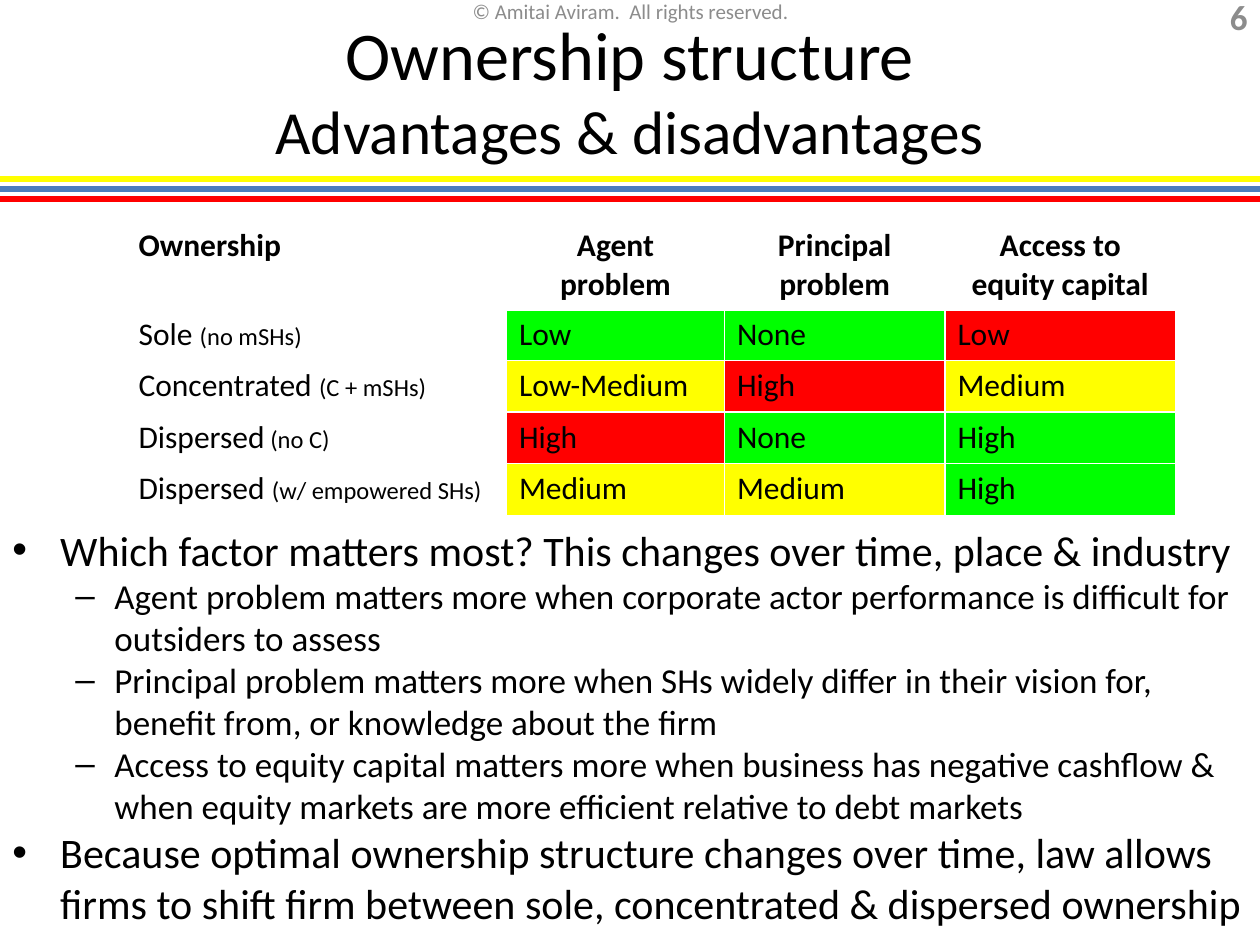
from pptx import Presentation
from pptx.dml.color import RGBColor
from pptx.enum.shapes import MSO_CONNECTOR
from pptx.enum.text import MSO_ANCHOR, PP_ALIGN
from pptx.oxml.ns import qn
from pptx.util import Inches, Pt
from lxml.etree import SubElement

COLORS = {"black": "000000", "grey": "8C8C8C", "white": "FFFFFF", "blue": "4B7EBC",
          "red": "FF0000", "yellow": "FFFF00", "green": "00FF00"}


def add_span(para, text, size, color="black", bold=False):
    span = para.add_run()
    span.text = text
    span.font.name = "Calibri"
    span.font.size = Pt(size)
    span.font.bold = bold
    span.font.color.rgb = RGBColor.from_string(COLORS[color])


def add_text_box(left, top, width, height, anchor=MSO_ANCHOR.MIDDLE):
    box = page.shapes.add_textbox(Inches(left), Inches(top), Inches(width), Inches(height))
    frame = box.text_frame
    frame.word_wrap = True
    frame.vertical_anchor = anchor
    frame.margin_top = frame.margin_bottom = Inches(0)
    return frame


deck = Presentation()
deck.slide_width, deck.slide_height = Inches(10), Inches(7.5)
page = deck.slides.add_slide(deck.slide_layouts[6])

# Three stripes under the title
for index, color in enumerate(["yellow", "blue", "red"]):
    y = Inches(1.42 + 0.08 * index)
    stripe = page.shapes.add_connector(MSO_CONNECTOR.STRAIGHT, 0, y, Inches(10), y)
    stripe.line.color.rgb = RGBColor.from_string(COLORS[color])
    stripe.line.width = Pt(3)
    SubElement(stripe._element.spPr, qn("a:effectLst"))

# Copyright line, page number and title
copyright_para = add_text_box(3.42, 0, 3.17, 0.17).paragraphs[0]
copyright_para.alignment = PP_ALIGN.CENTER
add_span(copyright_para, "© Amitai Aviram.  All rights reserved.", 12, "grey")

number_para = add_text_box(9.33, 0.01, 0.67, 0.24).paragraphs[0]
number_para.alignment = PP_ALIGN.RIGHT
add_span(number_para, "6", 20, "grey", bold=True)

title_para = add_text_box(0, 0, 10, 1.42).paragraphs[0]
title_para.alignment = PP_ALIGN.CENTER
add_span(title_para, "Ownership structure", 39)
title_para.add_line_break()
add_span(title_para, "Advantages & disadvantages", 35)

# Ratings table
headers = ["Ownership", "Agent problem", "Principal problem", "Access to\nequity capital"]
ratings = [
    ("Sole ", "(no mSHs)", [("Low", "green"), ("None", "green"), ("Low", "red")]),
    ("Concentrated ", "(C + mSHs)",
     [("Low-Medium", "yellow"), ("High", "red"), ("Medium", "yellow")]),
    ("Dispersed", " (no C)", [("High", "red"), ("None", "green"), ("High", "green")]),
    ("Dispersed ", "(w/ empowered SHs)",
     [("Medium", "yellow"), ("Medium", "yellow"), ("High", "green")]),
]
table = page.shapes.add_table(len(ratings) + 1, len(headers), Inches(1), Inches(1.75),
                              Inches(8.33), Inches(2.32)).table
table.first_row = table.horz_banding = False
for column, width in zip(table.columns, [3.02, 1.73, 1.75, 1.83]):
    column.width = Inches(width)
for index, row in enumerate(table.rows):
    row.height = Inches(0.41 if index else 0.7)

for index, header in enumerate(headers):
    para = table.cell(0, index).text_frame.paragraphs[0]
    para.alignment = PP_ALIGN.CENTER if index else PP_ALIGN.LEFT
    for line_index, line in enumerate(header.split("\n")):
        if line_index:
            para.add_line_break()
        add_span(para, line, 18, bold=True)

fills = {}
for row_index, (owner, detail, levels) in enumerate(ratings, start=1):
    para = table.cell(row_index, 0).text_frame.paragraphs[0]
    add_span(para, owner, 18)
    add_span(para, detail, 14)
    for column_index, (level, color) in enumerate(levels, start=1):
        add_span(table.cell(row_index, column_index).text_frame.paragraphs[0], level, 18)
        fills[row_index, column_index] = color

for row_index in range(len(table.rows)):
    for column_index in range(len(table.columns)):
        cell = table.cell(row_index, column_index)
        properties = cell._tc.get_or_add_tcPr()
        for side in ["lnL", "lnR", "lnT", "lnB"]:
            thick = (row_index, side) in [(0, "lnB"), (1, "lnT")]
            border = SubElement(properties, qn(f"a:{side}"), w=str(Pt(3 if thick else 1)))
            SubElement(SubElement(border, qn("a:solidFill")), qn("a:srgbClr"),
                       val=COLORS["white"])
        if (row_index, column_index) in fills:
            cell.fill.solid()
            cell.fill.fore_color.rgb = RGBColor.from_string(
                COLORS[fills[row_index, column_index]])
        else:
            cell.fill.background()

# Bullets: level and text
bullets = [
    (0, "Which factor matters most? This changes over time, place & industry"),
    (1, "Agent problem matters more when corporate actor performance is difficult for "
        "outsiders to assess"),
    (1, "Principal problem matters more when SHs widely differ in their vision for, "
        "benefit from, or knowledge about the firm"),
    (1, "Access to equity capital matters more when business has negative cashflow & "
        "when equity markets are more efficient relative to debt markets"),
    (0, "Because optimal ownership structure changes over time, law allows firms to "
        "shift firm between sole, concentrated & dispersed ownership"),
]
level_styles = [("•", 24, 0.38, 0.38), ("–", 20, 0.81, 0.31)]
body = add_text_box(0, 4.16, 10, 3.34, MSO_ANCHOR.TOP)
for index, (level, text) in enumerate(bullets):
    mark, size, indent, hanging = level_styles[level]
    para = body.add_paragraph() if index else body.paragraphs[0]
    para.level = level
    para.space_before = Pt(0)
    add_span(para, text, size)
    properties = para._p.get_or_add_pPr()
    properties.set("marL", str(Inches(indent)))
    properties.set("indent", str(-Inches(hanging)))
    SubElement(properties, qn("a:buFont"), typeface="Arial")
    SubElement(properties, qn("a:buChar"), char=mark)

deck.save("out.pptx")
